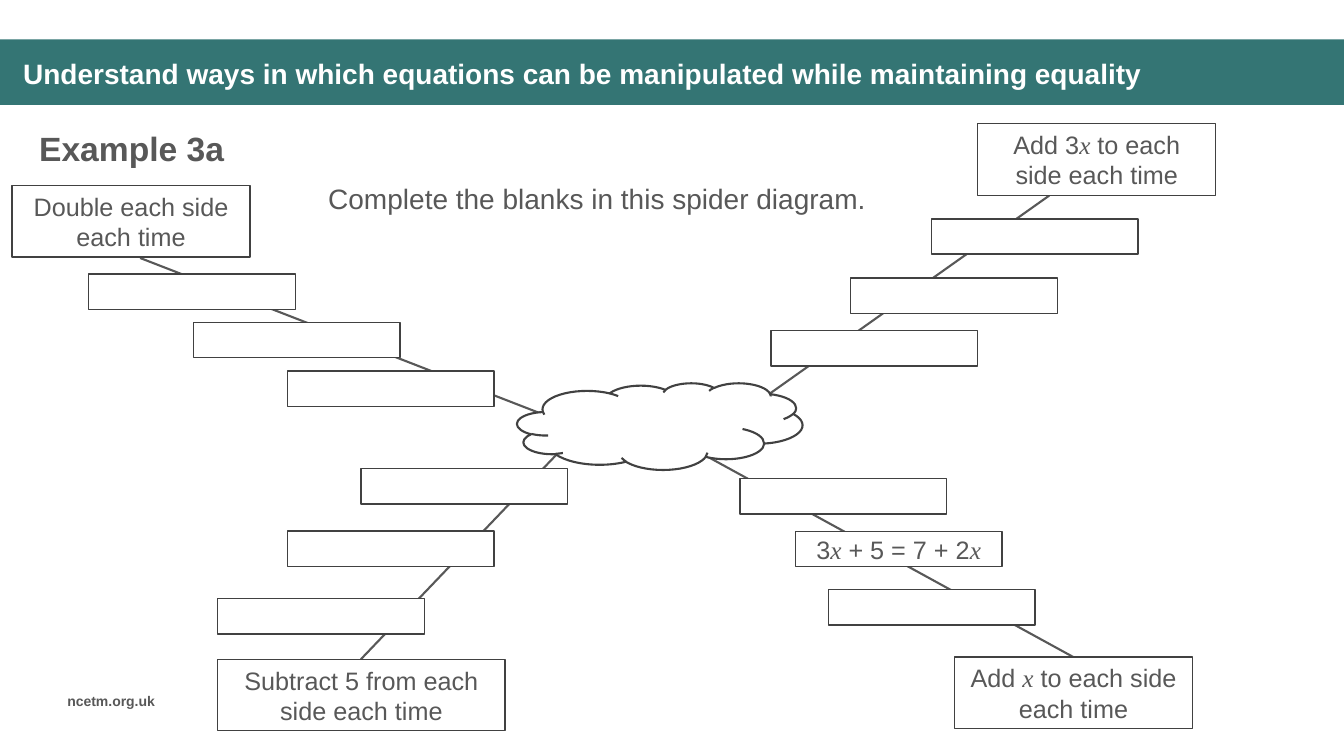
from dataclasses import dataclass

from lxml.etree import SubElement
from pptx import Presentation
from pptx.dml.color import RGBColor
from pptx.enum.shapes import MSO_CONNECTOR, MSO_SHAPE
from pptx.enum.text import MSO_ANCHOR, PP_ALIGN
from pptx.oxml.ns import qn
from pptx.util import Pt


@dataclass(frozen=True)
class Theme:
    teal: RGBColor = RGBColor(0x34, 0x75, 0x74)
    white: RGBColor = RGBColor(0xFF, 0xFF, 0xFF)
    text: RGBColor = RGBColor(0x58, 0x58, 0x58)
    outline: RGBColor = RGBColor(0x41, 0x41, 0x41)
    font: str = "Arial"
    variable_font: str = "Times New Roman"
    heading: int = 24
    title: int = 20
    body: int = 18
    footer: int = 10


theme = Theme()


def write(shape, text, size, color, bold=False, align=PP_ALIGN.LEFT, anchor=MSO_ANCHOR.TOP):
    """Fill the shape with one paragraph; parts between asterisks are set as variables."""
    frame = shape.text_frame
    frame.word_wrap = True
    frame.vertical_anchor = anchor
    para = frame.paragraphs[0]
    para.alignment = align
    for index, part in enumerate(text.split("*")):
        if not part:
            continue
        is_variable = index % 2 == 1
        span = para.add_run()
        span.text = part
        span.font.name = theme.variable_font if is_variable else theme.font
        span.font.italic = is_variable
        span.font.size = Pt(size)
        span.font.bold = bold
        span.font.color.rgb = color
    return para


def add_panel(kind, left, top, width, height, fill, line_width=0):
    panel = page.shapes.add_shape(kind, Pt(left), Pt(top), Pt(width), Pt(height))
    panel.shadow.inherit = False
    panel.fill.solid()
    panel.fill.fore_color.rgb = fill
    if line_width:
        panel.line.color.rgb = theme.outline
        panel.line.width = Pt(line_width)
    else:
        panel.line.fill.background()
    return panel


deck = Presentation()
deck.slide_width, deck.slide_height = Pt(960), Pt(540)
page = deck.slides.add_slide(deck.slide_layouts[6])

add_panel(MSO_SHAPE.RECTANGLE, 0, 28.2, 960, 46.8, theme.teal)

# Each branch: line from the cloud, line to the label, label left, top, width,
# label text, then the left, top and text of its equation boxes
branches = [
    ((549.4, 281.5), (749.5, 139.7), (698.4, 88.4, 170), "Add 3*x* to each side each time",
     [(550.8, 236.2, ""), (607.7, 198.7, ""), (665.3, 156.4, "")]),
    ((505.4, 326.2), (766.8, 469.4), (681.8, 469.4, 170), "Add *x* to each side each time",
     [(528.5, 342, ""), (568.1, 379.6, "3*x* + 5 = 7 + 2*x*"), (591.8, 421.2, "")]),
    ((389.5, 296.6), (100.1, 184.3), (8.6, 132.5, 170), "Double each side each time",
     [(205.2, 265, ""), (138.2, 230.4, ""), (63.4, 195.8, "")]),
    ((398.2, 324), (257.8, 470.9), (155.5, 470.9, 205.2), "Subtract 5 from each side each time",
     [(257.8, 334.8, ""), (205.2, 379.4, ""), (155.5, 427.7, "")]),
]
label_height, equation_width, equation_height = 51.1, 147.6, 25.2

for hub, tip, *_ in branches:
    leg = page.shapes.add_connector(MSO_CONNECTOR.STRAIGHT, *map(Pt, hub + tip))
    leg.line.color.rgb = theme.text
    leg.line.width = Pt(1.5)
    SubElement(leg._element.spPr, qn("a:effectLst"))

add_panel(MSO_SHAPE.CLOUD, 369.4, 273.6, 203.8, 61.9, theme.white, 1.5)

for _, _, (left, top, width), label, equations in branches:
    boxes = [(left, top, width, label_height, label)]
    boxes += [(x, y, equation_width, equation_height, text) for x, y, text in equations]
    for x, y, box_width, box_height, text in boxes:
        box = add_panel(MSO_SHAPE.RECTANGLE, x, y, box_width, box_height, theme.white, 1)
        if text:
            write(box, text, theme.body, theme.text,
                  align=PP_ALIGN.CENTER, anchor=MSO_ANCHOR.MIDDLE)

texts = [
    ("Understand ways in which equations can be manipulated while maintaining equality",
     (9.4, 35.3, 833.8, 33.8), theme.title, theme.white, True, PP_ALIGN.LEFT, MSO_ANCHOR.MIDDLE),
    ("Example 3a", (20.9, 87.8, 479.5, 36),
     theme.heading, theme.text, True, PP_ALIGN.LEFT, MSO_ANCHOR.TOP),
    ("Complete the blanks in this spider diagram.", (186.5, 126, 480.2, 31.7),
     theme.title, theme.text, False, PP_ALIGN.CENTER, MSO_ANCHOR.TOP),
    ("ncetm.org.uk", (41, 491, 87.1, 19.4),
     theme.footer, theme.text, True, PP_ALIGN.LEFT, MSO_ANCHOR.TOP),
]
for text, place, *style in texts:
    write(page.shapes.add_textbox(*map(Pt, place)), text, *style)

deck.save("out.pptx")
